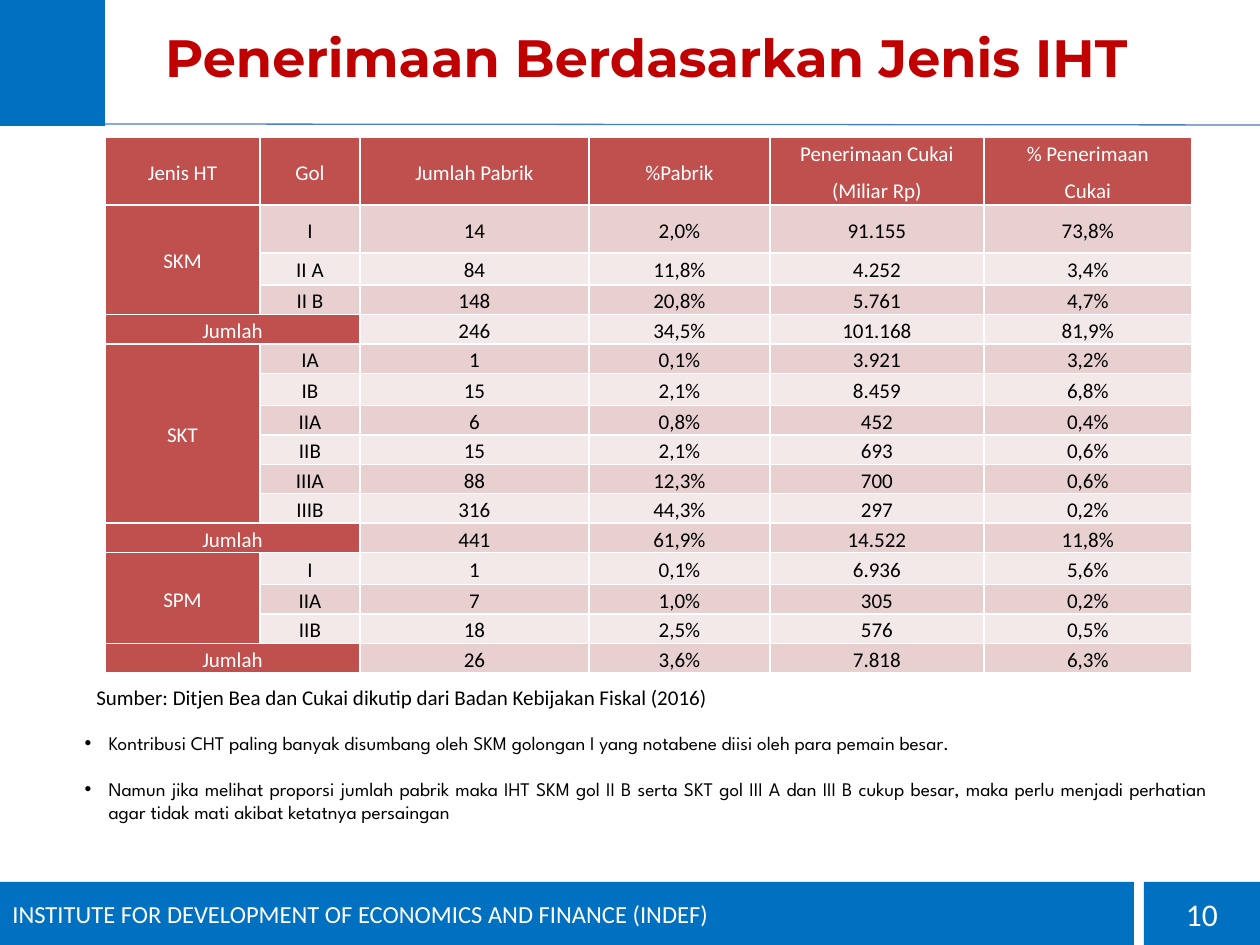
"""Build the slide on tobacco excise revenue by product type."""
import pptx
import pptx.util
import pptx.dml.color
import pptx.enum.shapes
import pptx.enum.text
import pptx.oxml
import pptx.oxml.ns

PX = 914400 // 126
ALIGN = pptx.enum.text.PP_ALIGN
MIDDLE = pptx.enum.text.MSO_ANCHOR.MIDDLE
RED, BLUE, WHITE, BLACK = "C0504D", "0070C0", "FFFFFF", "000000"
BANDS = ("F4E9E9", "E8D0D0")
COLS = (155, 100, 229, 181, 214, 208)
TALL = {0: 68, 1: 48, 2: 32, 6: 32, 12: 32}
HEAD = ("Jenis HT", "Gol", "Jumlah Pabrik", "%Pabrik",
        "Penerimaan Cukai\n(Miliar Rp)", "% Penerimaan\nCukai")
GROUPS = (
    ("SKM", (("I", "14", "2,0%", "91.155", "73,8%"),
             ("II A", "84", "11,8%", "4.252", "3,4%"),
             ("II B", "148", "20,8%", "5.761", "4,7%")),
     ("246", "34,5%", "101.168", "81,9%")),
    ("SKT", (("IA", "1", "0,1%", "3.921", "3,2%"),
             ("IB", "15", "2,1%", "8.459", "6,8%"),
             ("IIA", "6", "0,8%", "452", "0,4%"),
             ("IIB", "15", "2,1%", "693", "0,6%"),
             ("IIIA", "88", "12,3%", "700", "0,6%"),
             ("IIIB", "316", "44,3%", "297", "0,2%")),
     ("441", "61,9%", "14.522", "11,8%")),
    ("SPM", (("I", "1", "0,1%", "6.936", "5,6%"),
             ("IIA", "7", "1,0%", "305", "0,2%"),
             ("IIB", "18", "2,5%", "576", "0,5%")),
     ("26", "3,6%", "7.818", "6,3%")),
)
NOTES = (
    "Kontribusi CHT paling banyak disumbang oleh SKM golongan I yang notabene "
    "diisi oleh para pemain besar.",
    "Namun jika melihat proporsi jumlah pabrik maka IHT SKM gol II B serta SKT "
    "gol III A dan III B cukup besar, maka perlu menjadi perhatian agar tidak "
    "mati akibat ketatnya persaingan",
)


def px(*sizes):
    return [pptx.util.Emu(size * PX) for size in sizes]


def paint(part, color):
    part.solid()
    part.fore_color.rgb = pptx.dml.color.RGBColor.from_string(color)


def style(para, size, color, face="Calibri", align=ALIGN.LEFT, bold=False):
    para.alignment = align
    font = para.font
    font.name, font.size, font.bold = face, pptx.util.Pt(size), bold
    paint(font.fill, color)


def place(shape, *box):
    shape.left, shape.top, shape.width, shape.height = px(*box)


def add_title(slide, text):
    title = slide.shapes.title
    place(title, 116, 14, 1061, 86)
    frame = title.text_frame
    frame.text = text
    frame.auto_size = pptx.enum.text.MSO_AUTO_SIZE.NONE
    frame.margin_top, frame.margin_bottom = px(13, 13)
    style(frame.paragraphs[0], 30, "C00000", "Montserrat", ALIGN.CENTER, True)


def add_notes(slide):
    body = slide.placeholders[1]
    place(body, 72, 725, 1149, 106)
    frame = body.text_frame
    frame.text = "\n".join(NOTES)
    frame.auto_size = pptx.enum.text.MSO_AUTO_SIZE.NONE
    for num, para in enumerate(frame.paragraphs):
        style(para, 11, BLACK, "League Spartan", ALIGN.JUSTIFY)
        para.space_before = pptx.util.Pt(13 * num)
        props = para._p.get_or_add_pPr()
        props.set("marL", str(24 * PX))
        props.set("indent", str(-24 * PX))


def edge(cell):
    props = cell._tc.get_or_add_tcPr()
    space = pptx.oxml.ns.nsdecls("a")
    for side in "LRTB":
        props.append(pptx.oxml.parse_xml(
            f'<a:ln{side} {space} w="12700"><a:solidFill>'
            f'<a:srgbClr val="{WHITE}"/></a:solidFill></a:ln{side}>'))


def fill_cell(cell, text, back, color):
    edge(cell)
    paint(cell.fill, back)
    cell.vertical_anchor = MIDDLE
    cell.margin_left, cell.margin_right = px(8, 8)
    cell.margin_top = cell.margin_bottom = 0
    cell.text = text
    for para in cell.text_frame.paragraphs:
        style(para, 12, color, align=ALIGN.CENTER)
        para.line_spacing = 1.15
        para.space_before = para.space_after = pptx.util.Pt(2)


def add_grid(slide):
    rows, spans = [HEAD], []
    for name, lines, total in GROUPS:
        top = len(rows)
        rows += [(name if i == 0 else "",) + line for i, line in enumerate(lines)]
        spans += [(top, 0, len(rows) - 1, 0), (len(rows), 0, len(rows), 1)]
        rows.append(("Jumlah", "") + total)
    tall = [TALL.get(r, 29) for r in range(len(rows))]
    box = px(105, 137, sum(COLS), sum(tall))
    grid = slide.shapes.add_table(len(rows), len(COLS), *box).table
    grid.first_row = grid.horz_banding = False
    for col, wide in zip(grid.columns, px(*COLS)):
        col.width = wide
    for row, high in zip(grid.rows, px(*tall)):
        row.height = high
    for r, row in enumerate(rows):
        for c, text in enumerate(row):
            label = r == 0 or c == 0 or (c == 1 and row[0] == "Jumlah")
            back, color = (RED, WHITE) if label else (BANDS[r % 2], BLACK)
            fill_cell(grid.cell(r, c), text, back, color)
    for top, left, end, right in spans:
        grid.cell(top, left).merge(grid.cell(end, right))


def add_source(slide, text):
    frame = slide.shapes.add_textbox(*px(84, 678, 643, 38)).text_frame
    frame.word_wrap = False
    frame.text = text
    style(frame.paragraphs[0], 12, BLACK)


def add_bar(slide, box, text="", size=14, align=ALIGN.LEFT):
    kind = pptx.enum.shapes.MSO_SHAPE.RECTANGLE
    bar = slide.shapes.add_shape(kind, *px(*box))
    bar.shadow.inherit = False
    paint(bar.fill, BLUE)
    bar.line.fill.background()
    if text:
        bar.text_frame.text = text
        bar.text_frame.vertical_anchor = MIDDLE
        style(bar.text_frame.paragraphs[0], size, WHITE, align=align)


def add_rule(slide, *ends):
    kind = pptx.enum.shapes.MSO_CONNECTOR.STRAIGHT
    rule = slide.shapes.add_connector(kind, *px(*ends))
    paint(rule.line.fill, "4B7EBC")
    rule.line.width = pptx.util.Pt(0.75)
    rule._element.spPr.append(pptx.oxml.parse_xml(
        f'<a:effectLst {pptx.oxml.ns.nsdecls("a")}/>'))


def main():
    deck = pptx.Presentation()
    deck.slide_width, deck.slide_height = px(1260, 945)
    slide = deck.slides.add_slide(deck.slide_layouts[1])
    add_title(slide, "Penerimaan Berdasarkan Jenis IHT")
    add_grid(slide)
    add_source(slide, "Sumber: Ditjen Bea dan Cukai dikutip dari "
                      "Badan Kebijakan Fiskal (2016)")
    add_notes(slide)
    add_bar(slide, (0, 0, 105, 126))
    add_rule(slide, 105, 124, 1260, 125)
    add_bar(slide, (0, 882, 1134, 63),
            "INSTITUTE FOR DEVELOPMENT OF ECONOMICS AND FINANCE (INDEF)")
    add_bar(slide, (1144, 882, 116, 63), "10", 18, ALIGN.CENTER)
    deck.save("out.pptx")


if __name__ == "__main__":
    main()
